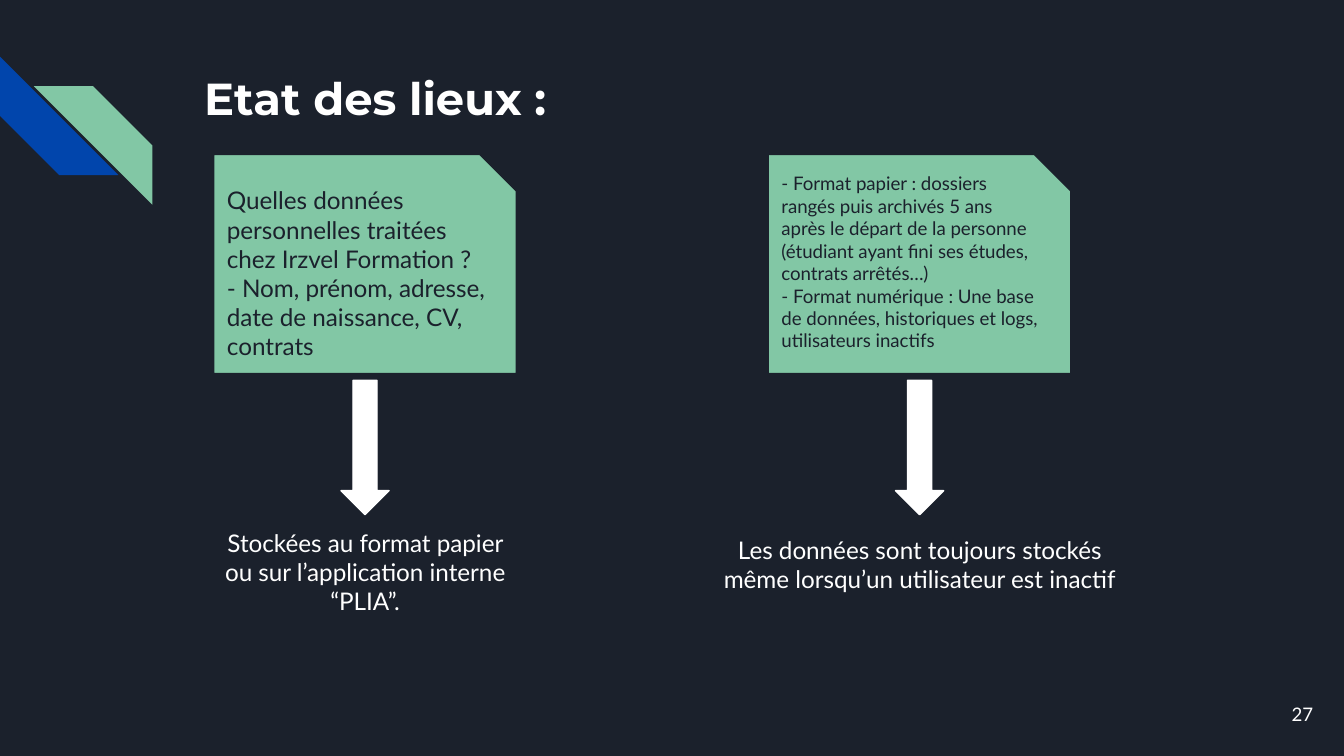
"""Builds the "Etat des lieux" slide with two data boxes, arrows and captions."""
from pptx import Presentation
from pptx.dml.color import RGBColor
from pptx.enum.shapes import MSO_SHAPE
from pptx.enum.text import MSO_ANCHOR, MSO_AUTO_SIZE, PP_ALIGN
from pptx.util import Cm, Pt

NIGHT = RGBColor(0x1B, 0x21, 0x2C)
BLUE = RGBColor(0x01, 0x45, 0xAC)
GREEN = RGBColor(0x82, 0xC7, 0xA5)
WHITE = RGBColor(0xFF, 0xFF, 0xFF)

COLUMNS = [
    dict(center=6.9, size=13, bottom=0.25,
         facts=["Quelles données personnelles traitées chez Irzvel Formation ?",
                "- Nom, prénom, adresse, date de naissance, CV, contrats"],
         caption="Stockées au format papier ou sur l’application interne “PLIA”.",
         caption_box=(9.73, 6.07, 5.11)),
    dict(center=17.38, size=10, bottom=0.67,
         facts=["- Format papier : dossiers rangés puis archivés 5 ans après le départ "
                "de la personne (étudiant ayant fini ses études, contrats arrêtés…)",
                "- Format numérique : Une base de données, historiques et logs, "
                "utilisateurs inactifs"],
         caption="Les données sont toujours stockés même lorsqu’un utilisateur est inactif",
         caption_box=(9.86, 8.31, 5.28)),
]


def write(tf, *lines, size=13, font="Lato", color=WHITE, bold=False,
          align=PP_ALIGN.LEFT, anchor=MSO_ANCHOR.TOP, bottom=0.25):
    tf.word_wrap = True
    tf.auto_size = MSO_AUTO_SIZE.NONE
    tf.vertical_anchor = anchor
    tf.margin_left = tf.margin_right = tf.margin_top = Cm(0.25)
    tf.margin_bottom = Cm(bottom)
    for i, line in enumerate(lines):
        p = tf.paragraphs[0] if i == 0 else tf.add_paragraph()
        p.alignment = align
        r = p.add_run()
        r.text = line
        r.font.size = Pt(size)
        r.font.name = font
        r.font.bold = bold
        r.font.color.rgb = color


class Deck:
    def __init__(self, width, height):
        self.prs = Presentation()
        self.prs.slide_width, self.prs.slide_height = Cm(width), Cm(height)
        self.s = None

    def slide(self, background):
        self.s = self.prs.slides.add_slide(self.prs.slide_layouts[5])
        self.s.background.fill.solid()
        self.s.background.fill.fore_color.rgb = background

    def title(self, text, x, y, w, h):
        sp = self.s.shapes.title
        sp.left, sp.top, sp.width, sp.height = Cm(x), Cm(y), Cm(w), Cm(h)
        write(sp.text_frame, text, size=24, font="Montserrat", bold=True)

    def shape(self, kind, x, y, w, h, fill, line=None, adjustments=()):
        sp = self.s.shapes.add_shape(kind, Cm(x), Cm(y), Cm(w), Cm(h))
        sp.shadow.inherit = False
        sp.fill.solid()
        sp.fill.fore_color.rgb = fill
        if line is None:
            sp.line.fill.background()
        else:
            sp.line.color.rgb = line
            sp.line.width = Pt(0.75)
        for i, value in enumerate(adjustments):
            sp.adjustments[i] = value
        return sp

    def stripe(self, x, y, side, fill, rotation=0, flip=False):
        sp = self.shape(MSO_SHAPE.DIAGONAL_STRIPE, x, y, side, side, fill,
                        adjustments=[0.5])
        sp.rotation = rotation
        if flip:
            sp.element.spPr.xfrm.set("flipH", "1")

    def card(self, center, lines, size, bottom):
        w = 5.72
        sp = self.shape(MSO_SHAPE.SNIP_1_RECTANGLE, center - w / 2, 2.92, w, 4.14,
                        GREEN, NIGHT, [0.167])
        write(sp.text_frame, *lines, size=size, color=NIGHT,
              anchor=MSO_ANCHOR.MIDDLE, bottom=bottom)

    def arrow(self, center):
        w = 0.91
        self.shape(MSO_SHAPE.DOWN_ARROW, center - w / 2, 7.19, w, 2.54,
                   WHITE, WHITE, [0.5, 0.5])

    def text(self, text, x, y, w, h, **style):
        sp = self.s.shapes.add_textbox(Cm(x), Cm(y), Cm(w), Cm(h))
        write(sp.text_frame, text, **style)


def main():
    deck = Deck(25.4, 14.29)
    deck.slide(NIGHT)
    deck.stripe(0, 1.07, 2.24, BLUE, rotation=270)
    deck.stripe(0.64, 1.63, 2.24, GREEN, flip=True)
    deck.title("Etat des lieux :", 3.61, 1.09, 19.56, 2.54)
    deck.text("27", 23.55, 12.95, 1.52, 1.09, size=10,
              align=PP_ALIGN.RIGHT, anchor=MSO_ANCHOR.MIDDLE)
    for col in COLUMNS:
        center = col["center"]
        top, w, h = col["caption_box"]
        deck.card(center, col["facts"], col["size"], col["bottom"])
        deck.text(col["caption"], center - w / 2, top, w, h, align=PP_ALIGN.CENTER)
        deck.arrow(center)
    deck.prs.save("out.pptx")


if __name__ == "__main__":
    main()
